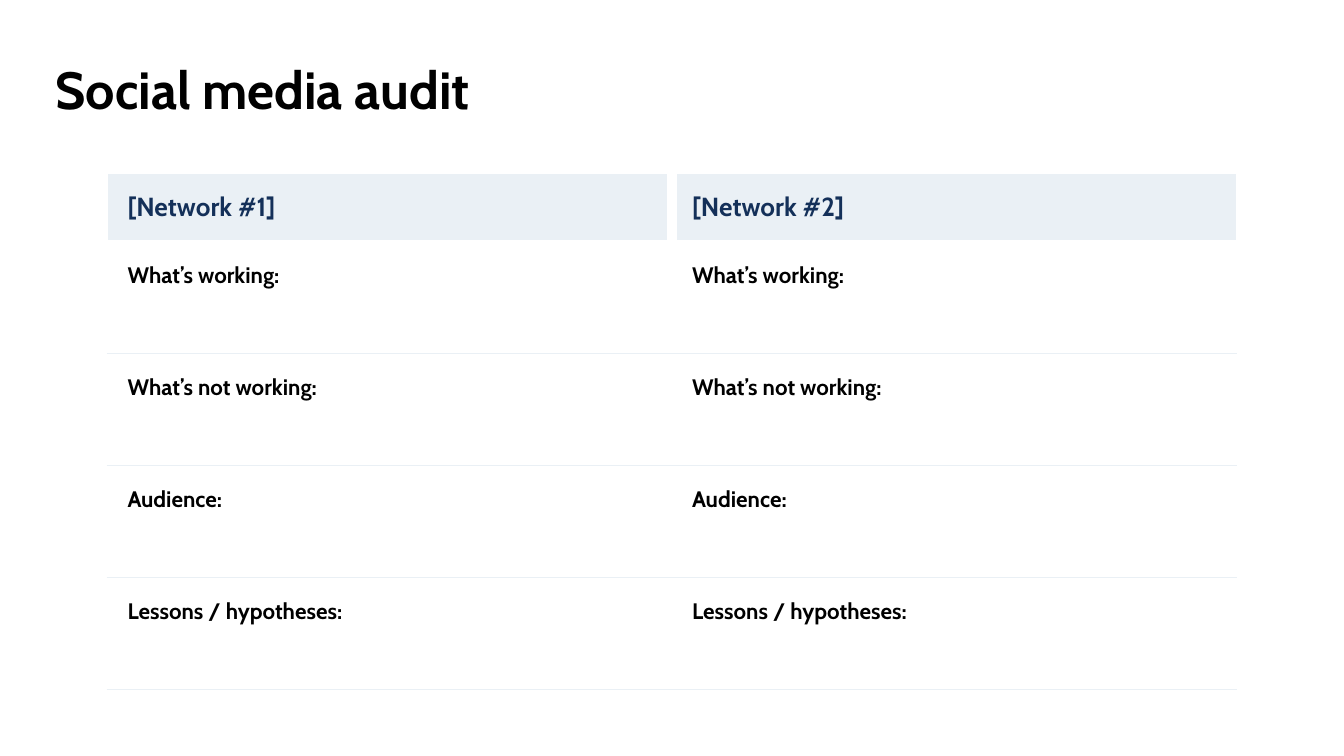
from lxml import etree
from pptx import Presentation
from pptx import util as u
from pptx.dml.color import RGBColor
from pptx.enum import text
from pptx.oxml.ns import qn

WHITE = RGBColor(0xFF, 0xFF, 0xFF)
BLACK = RGBColor(0, 0, 0)
NAVY = RGBColor(0x14, 0x30, 0x59)
PALE = RGBColor(0xEA, 0xF0, 0xF5)

NETWORKS = ["[Network #1]", "[Network #2]"]
TOPICS = ["What’s working:", "What’s not working:", "Audience:", "Lessons / hypotheses:"]


class AuditSlide:
    font = "Cabin"
    side_inset = u.Cm(0.38)
    edge_inset = u.Cm(0.25)

    def __init__(self, deck):
        self.slide = deck.slides.add_slide(deck.slide_layouts[5])

    def add_words(self, para, words, size, color):
        span = para.add_run()
        span.text = words
        span.font.name = self.font
        span.font.size = u.Pt(size)
        span.font.bold = True
        span.font.color.rgb = color

    def title(self, words, left, top, width, height):
        box = self.slide.shapes.title
        box.left, box.top, box.width, box.height = map(u.Cm, (left, top, width, height))
        frame = box.text_frame
        frame.word_wrap = True
        frame.auto_size = text.MSO_AUTO_SIZE.NONE
        frame.vertical_anchor = text.MSO_ANCHOR.MIDDLE
        frame.margin_left = u.Cm(0.15)
        frame.margin_right = self.edge_inset
        para = frame.paragraphs[0]
        para.alignment = text.PP_ALIGN.LEFT
        para.line_spacing = 0.9
        self.add_words(para, words, 28, BLACK)

    def borders(self, cell, edges):
        """Draw edges, a list of (side, color, points) in the order L, R, T, B."""
        props = cell._tc.get_or_add_tcPr()
        for place, (side, color, points) in enumerate(edges):
            line = etree.Element(qn(f"a:ln{side}"), w=str(u.Pt(points)))
            fill = etree.SubElement(line, qn("a:solidFill"))
            etree.SubElement(fill, qn("a:srgbClr"), val=str(color))
            props.insert(place, line)

    def cell(self, cell, words, column, is_header):
        cell.margin_left = cell.margin_right = self.side_inset
        cell.margin_top = self.edge_inset if is_header else self.side_inset
        cell.margin_bottom = self.edge_inset
        edges = [("R" if column == 0 else "L", WHITE, 6)]
        if is_header:
            cell.vertical_anchor = text.MSO_ANCHOR.MIDDLE
            cell.fill.solid()
            cell.fill.fore_color.rgb = PALE
        else:
            cell.vertical_anchor = text.MSO_ANCHOR.TOP
            cell.fill.background()
            edges += [("T", PALE, 0.75), ("B", PALE, 0.75)]
        self.borders(cell, edges)
        size, color = (14, NAVY) if is_header else (12, BLACK)
        self.add_words(cell.text_frame.paragraphs[0], words, size, color)

    def table(self, rows, left, top, column_width, header_height, row_height):
        columns = len(rows[0])
        height = header_height + row_height * (len(rows) - 1)
        table = self.slide.shapes.add_table(
            len(rows), columns, u.Cm(left), u.Cm(top),
            u.Cm(column_width * columns), u.Cm(height)).table
        table.first_row = table.horz_banding = False
        for column in table.columns:
            column.width = u.Cm(column_width)
        for r, row in enumerate(rows):
            table.rows[r].height = u.Cm(row_height if r else header_height)
            for c, words in enumerate(row):
                self.cell(table.cell(r, c), words, c, r == 0)


def main():
    deck = Presentation()
    deck.slide_width, deck.slide_height = u.Cm(25.4), u.Cm(14.29)
    page = AuditSlide(deck)
    rows = [NETWORKS] + [[topic] * len(NETWORKS) for topic in TOPICS]
    page.table(rows, 2.03, 3.28, 10.67, 1.28, 2.12)
    page.title("Social media audit", 0.9, 1, 21.2, 1.5)
    deck.save("out.pptx")


if __name__ == "__main__":
    main()
